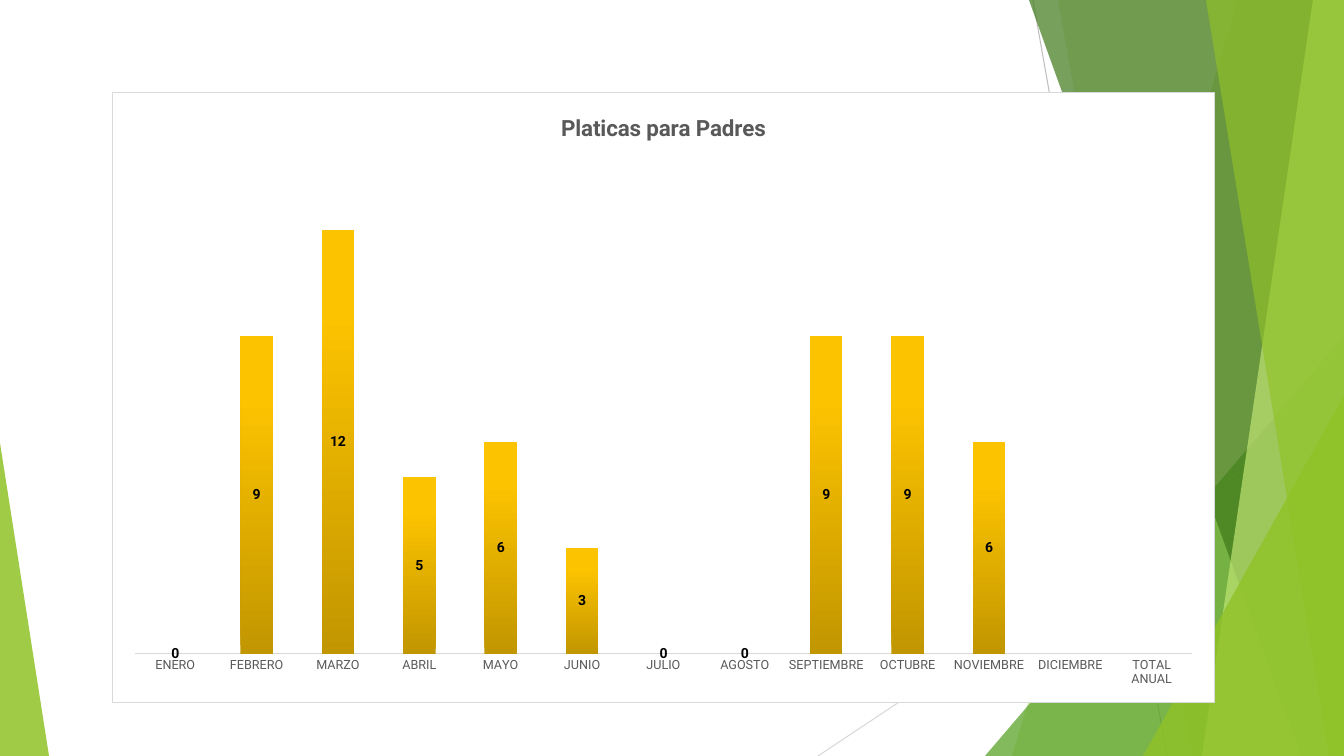
from lxml import etree
from pptx import Presentation
from pptx import util as u
from pptx.chart import data
from pptx.dml.color import RGBColor
from pptx.enum import chart as ce
from pptx.enum import shapes as se
from pptx.oxml import parse_xml
from pptx.oxml.ns import nsdecls, qn

PX = 914400 / 100.8
WIDE, HIGH = 1344, 756
FONT = "Roboto"
WHITE = RGBColor(0xFF, 0xFF, 0xFF)
BLACK = RGBColor(0, 0, 0)
SLATE = RGBColor(0x59, 0x59, 0x59)
SILVER = RGBColor(0xBF, 0xBF, 0xBF)
PALE = RGBColor(0xD9, 0xD9, 0xD9)
LIME = RGBColor(0x90, 0xC2, 0x26)
GREEN = RGBColor(0x54, 0xA0, 0x21)
FOREST = RGBColor(0x3F, 0x78, 0x19)
MINT = RGBColor(0xC0, 0xE4, 0x74)
GOLD = [(0, RGBColor(0xC2, 0x96, 0)), (80, RGBColor(0xFC, 0xC3, 0)),
        (100, RGBColor(0xFD, 0xC4, 0))]

TITLE = "Platicas para Padres"
TALKS = [
    ("ENERO", 0), ("FEBRERO", 9), ("MARZO", 12), ("ABRIL", 5), ("MAYO", 6),
    ("JUNIO", 3), ("JULIO", 0), ("AGOSTO", 0), ("SEPTIEMBRE", 9),
    ("OCTUBRE", 9), ("NOVIEMBRE", 6), ("DICIEMBRE", None),
    ("TOTAL ANUAL", None),
]
FRAME = (112, 92, 1103, 611)
PLOT = {"x": 0.02, "y": 0.11, "w": 0.96, "h": 0.81}
RAYS = [((1033, 0), (1167, HIGH), SILVER), ((WIDE, 406), (818, HIGH), PALE)]
BANDS = [
    ("band", 1238, 1012, LIME, 30),
    ("band", 1058, 1192, LIME, 20),
    ("peak", (985, 336, 359, 420), 1, GREEN, 72),
    ("band", 1029, 1301, FOREST, 70),
    ("band", 1313, 1202, MINT, 70),
    ("band", 1206, 1329, LIME, 65),
    ("peak", (1143, 396, 201, 360), 1, LIME, 80),
    ("peak", (0, 443, 49, 313), 0, LIME, 85),
]


def emu(*vals):
    return [u.Emu(round(v * PX)) for v in vals]


def paint(shape, tone, alpha):
    shape.shadow.inherit = False
    shape.fill.solid()
    shape.fill.fore_color.rgb = tone
    shape.line.fill.background()
    clr = shape._element.spPr.find(".//" + qn("a:srgbClr"))
    etree.SubElement(clr, qn("a:alpha")).set("val", str(alpha * 1000))


def band(slide, top, foot):
    pen = slide.shapes.build_freeform(top, 0, scale=PX)
    pen.add_line_segments([(WIDE, 0), (WIDE, HIGH), (foot, HIGH)], close=True)
    return pen.convert_to_shape()


def peak(slide, box, tip):
    shape = slide.shapes.add_shape(se.MSO_SHAPE.ISOSCELES_TRIANGLE, *emu(*box))
    shape.adjustments[0] = tip
    return shape


def ray(slide, start, end, tone):
    line = slide.shapes.add_connector(
        se.MSO_CONNECTOR.STRAIGHT, *emu(*start, *end))
    line.line.color.rgb = tone
    line.line.width = u.Pt(0.75)
    etree.SubElement(line._element.spPr, qn("a:effectLst"))


def style(font, size, tone, bold):
    font.name = FONT
    font.size = u.Pt(size)
    font.color.rgb = tone
    font.bold = bold


def frame(chart):
    root = chart.element
    root.insert(1, parse_xml(
        f'<c:roundedCorners {nsdecls("c")} val="0"/>'))
    root.find(qn("c:chart")).addnext(parse_xml(
        f'<c:spPr {nsdecls("c", "a")}><a:solidFill><a:srgbClr val="{WHITE}"/>'
        f'</a:solidFill><a:ln w="9525"><a:solidFill><a:srgbClr val="{PALE}"/>'
        '</a:solidFill></a:ln></c:spPr>'))
    area = root.find(".//" + qn("c:plotArea"))
    for old in area.findall(qn("c:layout")):
        area.remove(old)
    spots = "".join(f'<c:{k} val="{v}"/>' for k, v in PLOT.items())
    area.insert(0, parse_xml(
        f'<c:layout {nsdecls("c")}><c:manualLayout>'
        '<c:layoutTarget val="inner"/><c:xMode val="edge"/>'
        f'<c:yMode val="edge"/>{spots}</c:manualLayout></c:layout>'))


def shade(bars):
    bars.format.fill.gradient()
    grad = bars._element.find(".//" + qn("a:gradFill"))
    stops = "".join(
        f'<a:gs pos="{at * 1000}"><a:srgbClr val="{tone}"/></a:gs>'
        for at, tone in GOLD)
    grad.getparent().replace(grad, parse_xml(
        f'<a:gradFill {nsdecls("a")}><a:gsLst>{stops}</a:gsLst>'
        '<a:lin ang="16200000" scaled="0"/></a:gradFill>'))


def graph(slide):
    info = data.CategoryChartData()
    info.categories = [month for month, _ in TALKS]
    info.add_series("Series 1", [count for _, count in TALKS])
    chart = slide.shapes.add_chart(
        ce.XL_CHART_TYPE.COLUMN_STACKED, *emu(*FRAME), info).chart
    style(chart.font, 10, BLACK, False)
    chart.has_legend = False
    chart.has_title = True
    run = chart.chart_title.text_frame.paragraphs[0].add_run()
    run.text = TITLE
    style(run.font, 16, SLATE, True)
    chart.chart_title.include_in_layout = False

    months = chart.category_axis
    months.major_tick_mark = ce.XL_TICK_MARK.NONE
    months.minor_tick_mark = ce.XL_TICK_MARK.NONE
    months.format.line.color.rgb = PALE
    months.format.line.width = u.Pt(1)
    style(months.tick_labels.font, 9, SLATE, False)
    scale = chart.value_axis
    scale.minimum_scale, scale.maximum_scale = 0, 14
    scale.has_major_gridlines = False
    scale.visible = False

    plot = chart.plots[0]
    plot.vary_by_categories = False
    plot.gap_width, plot.overlap = 150, 100
    bars = plot.series[0]
    shade(bars)
    tags = bars.data_labels
    tags.show_value = True
    tags.position = ce.XL_LABEL_POSITION.CENTER
    style(tags.font, 10, BLACK, True)
    frame(chart)


def main():
    deck = Presentation()
    deck.slide_width, deck.slide_height = emu(WIDE, HIGH)
    slide = deck.slides.add_slide(deck.slide_layouts[6])
    for item in RAYS:
        ray(slide, *item)
    makers = {"band": band, "peak": peak}
    for kind, first, second, tone, alpha in BANDS:
        paint(makers[kind](slide, first, second), tone, alpha)
    graph(slide)
    deck.save("out.pptx")


if __name__ == "__main__":
    main()
